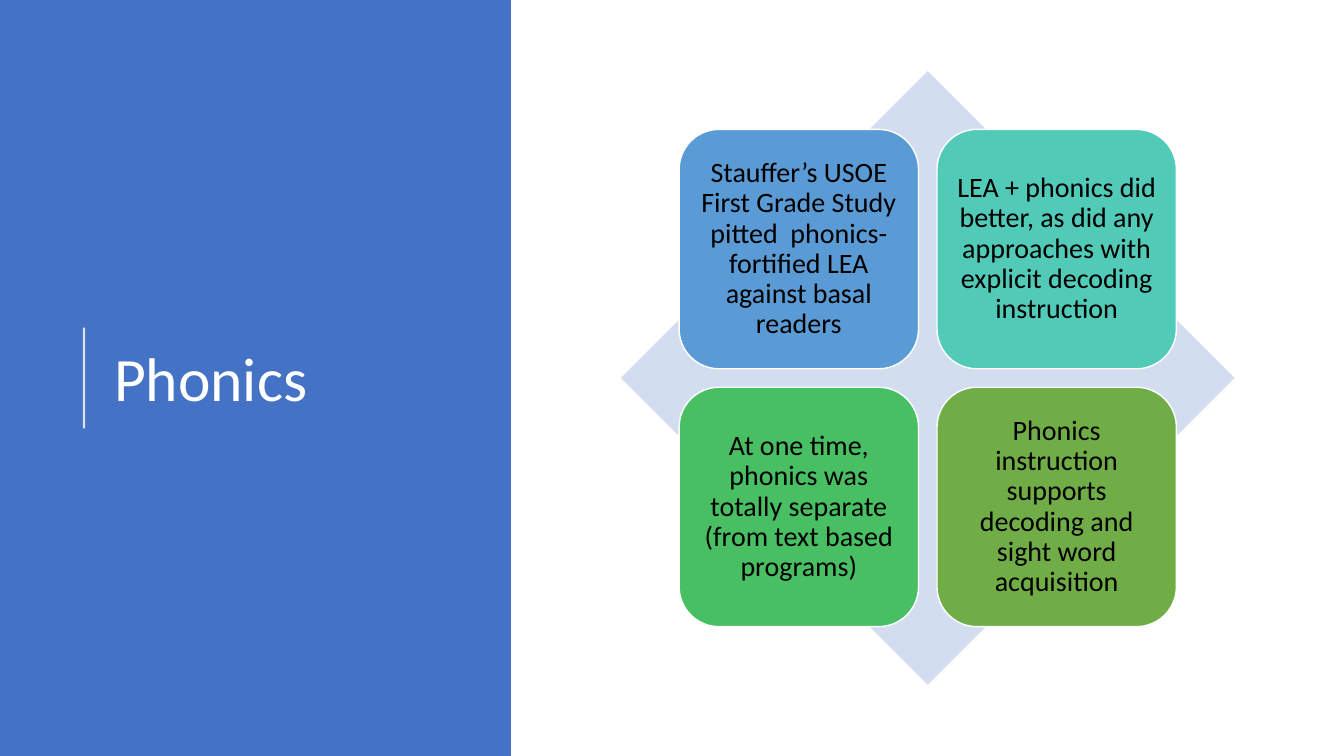
import dataclasses

import lxml.etree
import pptx
import pptx.dml.color
import pptx.enum.shapes
import pptx.enum.text
import pptx.oxml.ns
import pptx.util

Pt = pptx.util.Pt
SHAPE = pptx.enum.shapes.MSO_SHAPE
ALIGN = pptx.enum.text.PP_ALIGN
qn = pptx.oxml.ns.qn


@dataclasses.dataclass(frozen=True)
class Theme:
    font: str = "Calibri"
    title_size: float = 44
    card_size: float = 20
    panel: str = "4472C4"
    diamond: str = "D2DEEF"
    white: str = "FFFFFF"
    black: str = "000000"
    cards: tuple = ("5B9BD5", "52CAB8", "49BF64", "70AD47")


def rgb(color):
    return pptx.dml.color.RGBColor.from_string(color)


class SlideBuilder:
    def __init__(self, slide, theme):
        self.slide = slide
        self.theme = theme

    def shape(self, kind, left, top, width, height, fill, line=None):
        sp = self.slide.shapes.add_shape(
            kind, Pt(left), Pt(top), Pt(width), Pt(height))
        sp.shadow.inherit = False
        sp.fill.solid()
        sp.fill.fore_color.rgb = rgb(fill)
        if line:
            sp.line.color.rgb = rgb(line)
            sp.line.width = Pt(1)
        else:
            sp.line.fill.background()
        return sp

    def label(self, sp, text, size, color, align):
        tf = sp.text_frame
        tf.word_wrap = True
        tf.vertical_anchor = pptx.enum.text.MSO_ANCHOR.MIDDLE
        tf.text = text
        p = tf.paragraphs[0]
        p.alignment = align
        p.line_spacing = 0.9
        r = p.runs[0]
        r.font.name = self.theme.font
        r.font.size = Pt(size)
        r.font.color.rgb = rgb(color)

    def title(self, text, left, top, width, height):
        sp = self.slide.shapes.add_textbox(
            Pt(left), Pt(top), Pt(width), Pt(height))
        self.label(sp, text, self.theme.title_size, self.theme.white, ALIGN.LEFT)

    def card(self, text, left, top, side, fill):
        sp = self.shape(SHAPE.ROUNDED_RECTANGLE, left, top, side, side,
                        fill, self.theme.white)
        tf = sp.text_frame
        tf.margin_left = tf.margin_right = Pt(6)
        tf.margin_top = tf.margin_bottom = Pt(6)
        self.label(sp, text, self.theme.card_size, self.theme.black, ALIGN.CENTER)

    def rule(self, x, top, bottom, width, opacity):
        line = self.slide.shapes.add_connector(
            pptx.enum.shapes.MSO_CONNECTOR.STRAIGHT,
            Pt(x), Pt(bottom), Pt(x), Pt(top))
        line.line.color.rgb = rgb(self.theme.white)
        line.line.width = Pt(width)
        props = line._element.spPr
        color = next(props.iter(qn("a:srgbClr")))
        alpha = lxml.etree.SubElement(color, qn("a:alpha"))
        alpha.set("val", str(opacity * 1000))
        lxml.etree.SubElement(props, qn("a:effectLst"))


CARD_TEXTS = (
    "Stauffer’s USOE First Grade Study pitted  phonics-fortified LEA "
    "against basal readers",
    "LEA + phonics did better, as did any approaches with explicit "
    "decoding instruction",
    "At one time, phonics was totally separate (from text based programs)",
    "Phonics instruction supports decoding and sight word acquisition",
)


def main():
    prs = pptx.Presentation()
    prs.slide_width, prs.slide_height = Pt(960), Pt(540)
    theme = Theme()
    s = SlideBuilder(prs.slides.add_slide(prs.slide_layouts[6]), theme)

    # Title panel
    s.shape(SHAPE.RECTANGLE, 0, 0, 365, 540, theme.panel)
    s.title("Phonics", 74.4, 56, 266, 433.5)
    s.rule(60, 234, 306, 1.5, 80)

    # Diamond behind the cards
    center_x, center_y, diamond = 662.7, 270, 438.5
    s.shape(SHAPE.DIAMOND, center_x - diamond / 2, center_y - diamond / 2,
            diamond, diamond, theme.diamond)

    # Two-by-two cards around the diamond's centre
    side, gap = 171, 13.2
    left = center_x - side - gap / 2
    top = center_y - side - gap / 2
    for i, (text, fill) in enumerate(zip(CARD_TEXTS, theme.cards)):
        row, col = divmod(i, 2)
        s.card(text, left + col * (side + gap), top + row * (side + gap),
               side, fill)

    prs.save("out.pptx")


if __name__ == "__main__":
    main()
